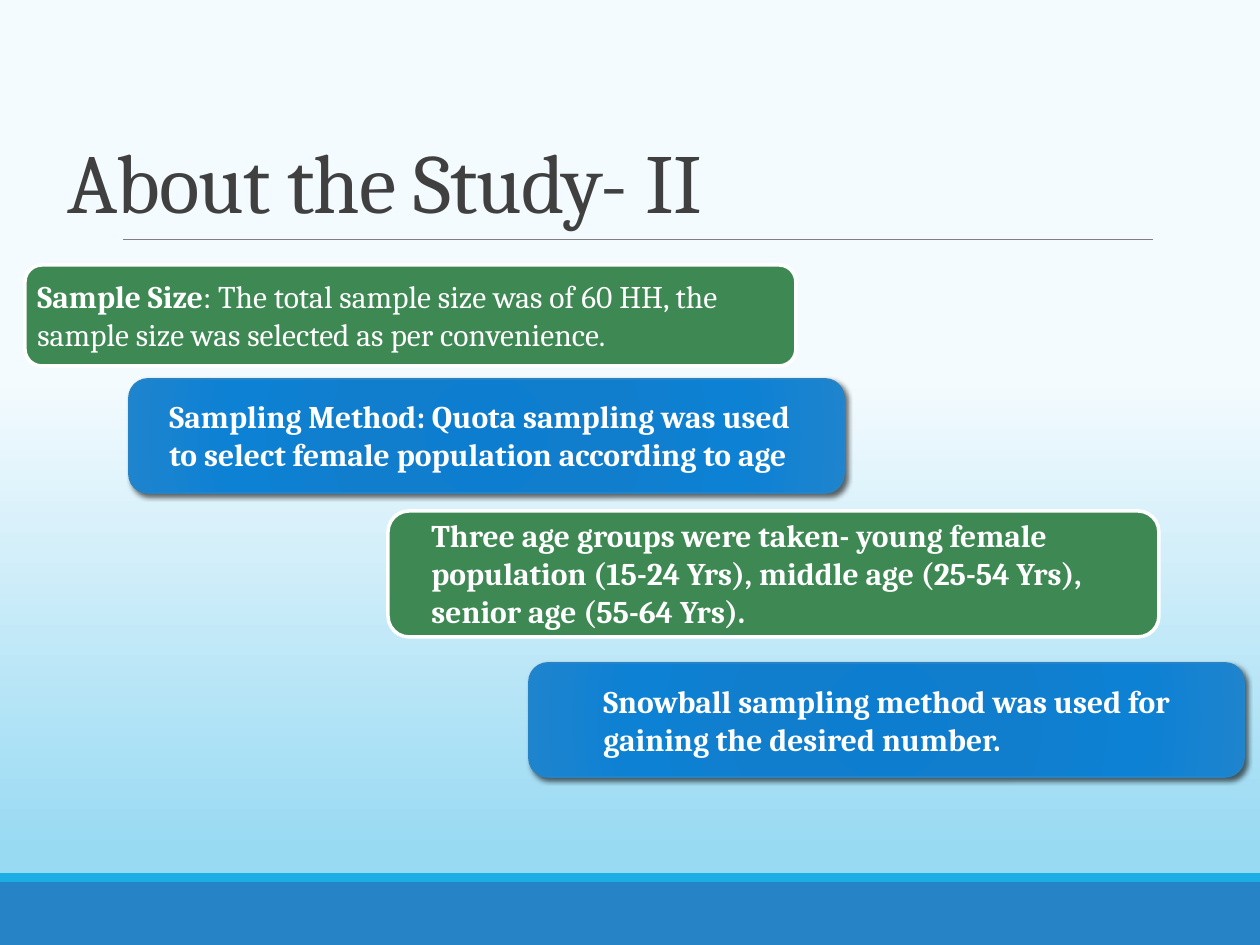
"""Build the slide about the study's sample and sampling methods."""
from lxml import etree
from pptx import Presentation
from pptx import util as u
from pptx.dml.color import RGBColor
from pptx.enum import shapes, text
from pptx.oxml.ns import qn

PX = 914400 / 126
WHITE = RGBColor(0xFF, 0xFF, 0xFF)
BLACK = RGBColor(0, 0, 0)
INK = RGBColor(0x40, 0x40, 0x40)
GREY = RGBColor(0x80, 0x80, 0x80)
BLUE = RGBColor(0x26, 0x83, 0xC6)
CYAN = RGBColor(0x1C, 0xAD, 0xE4)
GREEN = RGBColor(0x3E, 0x88, 0x53)
SKY = [(40, RGBColor(0xF4, 0xFB, 0xFE)), (90, RGBColor(0x99, 0xDA, 0xF3)),
       (100, RGBColor(0x99, 0xDA, 0xF3)), (100, RGBColor(0xBB, 0xE6, 0xF7))]
GLOW = [(0, RGBColor(0x0D, 0x7E, 0xCF)), (34, RGBColor(0x11, 0x7E, 0xCD)),
        (70, RGBColor(0x0D, 0x81, 0xD4)), (100, RGBColor(0x1E, 0x84, 0xCE))]


def px(*sizes):
    """Turn pixel lengths into EMU."""
    return [round(size * PX) for size in sizes]


def node(parent, tag, **attrs):
    """Append a drawing element with the given attributes."""
    return etree.SubElement(parent, qn("a:" + tag), {k: str(v) for k, v in attrs.items()})


def blend(fill, root, stops, round_=False):
    """Give a fill a vertical or a circular gradient."""
    fill.gradient()
    grad = root.find(".//" + qn("a:gradFill"))
    for child in list(grad):
        grad.remove(child)
    row = node(grad, "gsLst")
    for pos, color in stops:
        node(node(row, "gs", pos=pos * 1000), "srgbClr", val=color)
    if round_:
        way = node(grad, "path", path="circle")
        node(way, "fillToRect", l=100000, t=100000, r=100000, b=100000)
    else:
        node(grad, "lin", ang=5400000, scaled=0)


def write(para, words, size=18, color=WHITE, bold=False, gap=None):
    """Add a formatted run to a paragraph."""
    run = para.add_run()
    run.text = words
    font = run.font
    font.name, font.size, font.bold = "Cambria", u.Pt(size), bold
    font.color.rgb = color
    if gap is not None:
        run.font._element.set("spc", str(gap))


class Deck:
    """Hold the style and the current slide."""

    def __init__(self):
        self.prs = Presentation()
        self.prs.slide_width, self.prs.slide_height = px(1260, 945)
        self.slide = self.prs.slides.add_slide(self.prs.slide_layouts[5])
        blend(self.slide.background.fill, self.slide.element, SKY)

    def title(self, words, *box):
        """Move and format the title."""
        item = self.slide.shapes.title
        item.left, item.top, item.width, item.height = px(*box)
        frame = item.text_frame
        frame.word_wrap = True
        frame.auto_size = text.MSO_AUTO_SIZE.NONE
        frame.vertical_anchor = text.MSO_ANCHOR.BOTTOM
        para = frame.paragraphs[0]
        para.alignment = text.PP_ALIGN.LEFT
        para.line_spacing = 0.85
        write(para, words, size=48, color=INK, gap=-50)

    def rule(self, left, right, top):
        """Draw a thin level line."""
        line = self.slide.shapes.add_connector(
            shapes.MSO_CONNECTOR.STRAIGHT, *px(left, top, right, top))
        line.line.color.rgb, line.line.width = GREY, u.Pt(0.5)
        node(line.element.spPr, "effectLst")

    def shape(self, kind, box, color=None):
        """Add a shape with no shadow and an optional plain fill."""
        item = self.slide.shapes.add_shape(kind, *px(*box))
        item.shadow.inherit = False
        if color is not None:
            item.fill.solid()
            item.fill.fore_color.rgb = color
        return item

    def bar(self, color, *box):
        """Add a plain band."""
        self.shape(shapes.MSO_SHAPE.RECTANGLE, box, color).line.fill.background()

    def flat(self, *box):
        """Add a green card with a white edge."""
        card = self.shape(shapes.MSO_SHAPE.ROUNDED_RECTANGLE, box, GREEN)
        card.line.color.rgb, card.line.width = WHITE, u.Pt(2)

    def glossy(self, *box):
        """Add a blue gradient card with a shadow."""
        card = self.shape(shapes.MSO_SHAPE.ROUNDED_RECTANGLE, box)
        blend(card.fill, card.element, GLOW, round_=True)
        card.line.color.rgb, card.line.width = BLUE, u.Pt(1)
        effects = card.element.spPr.find(qn("a:effectLst"))
        shade = node(effects, "outerShdw", blurRad=u.Pt(3), dist=u.Pt(2),
                     dir=2700000, algn="tl", rotWithShape=0)
        node(node(shade, "srgbClr", val=BLACK), "alpha", val=60000)

    def note(self, box, bold, plain=""):
        """Add a text box that opens in bold."""
        frame = self.slide.shapes.add_textbox(*px(*box)).text_frame
        frame.word_wrap = True
        para = frame.paragraphs[0]
        write(para, bold, bold=True)
        if plain:
            write(para, plain)


def main():
    """Lay out the slide and save it."""
    deck = Deck()
    deck.title("About the Study- II", 55, 20, 1260, 217)
    deck.rule(123, 1153, 239)
    deck.bar(BLUE, 0, 882, 1260, 63)
    deck.bar(CYAN, 0, 873, 1260, 9)
    deck.glossy(529, 663, 715, 114)
    deck.glossy(129, 379, 715, 114)
    deck.flat(25, 265, 771, 101)
    deck.note((25, 271, 748, 89), "Sample Size",
              ": The total sample size was of 60 HH, the sample size was "
              "selected as per convenience.")
    deck.note((157, 391, 660, 89),
              "Sampling Method: Quota sampling was used to select female "
              "population according to age")
    deck.note((591, 676, 630, 89),
              "Snowball sampling method was used for gaining the desired number.")
    deck.flat(388, 511, 771, 126)
    deck.note((419, 510, 734, 126),
              "Three age groups were taken- young female population (15-24 Yrs), "
              "middle age (25-54 Yrs), senior age (55-64 Yrs).")
    deck.prs.save("out.pptx")


if __name__ == "__main__":
    main()
